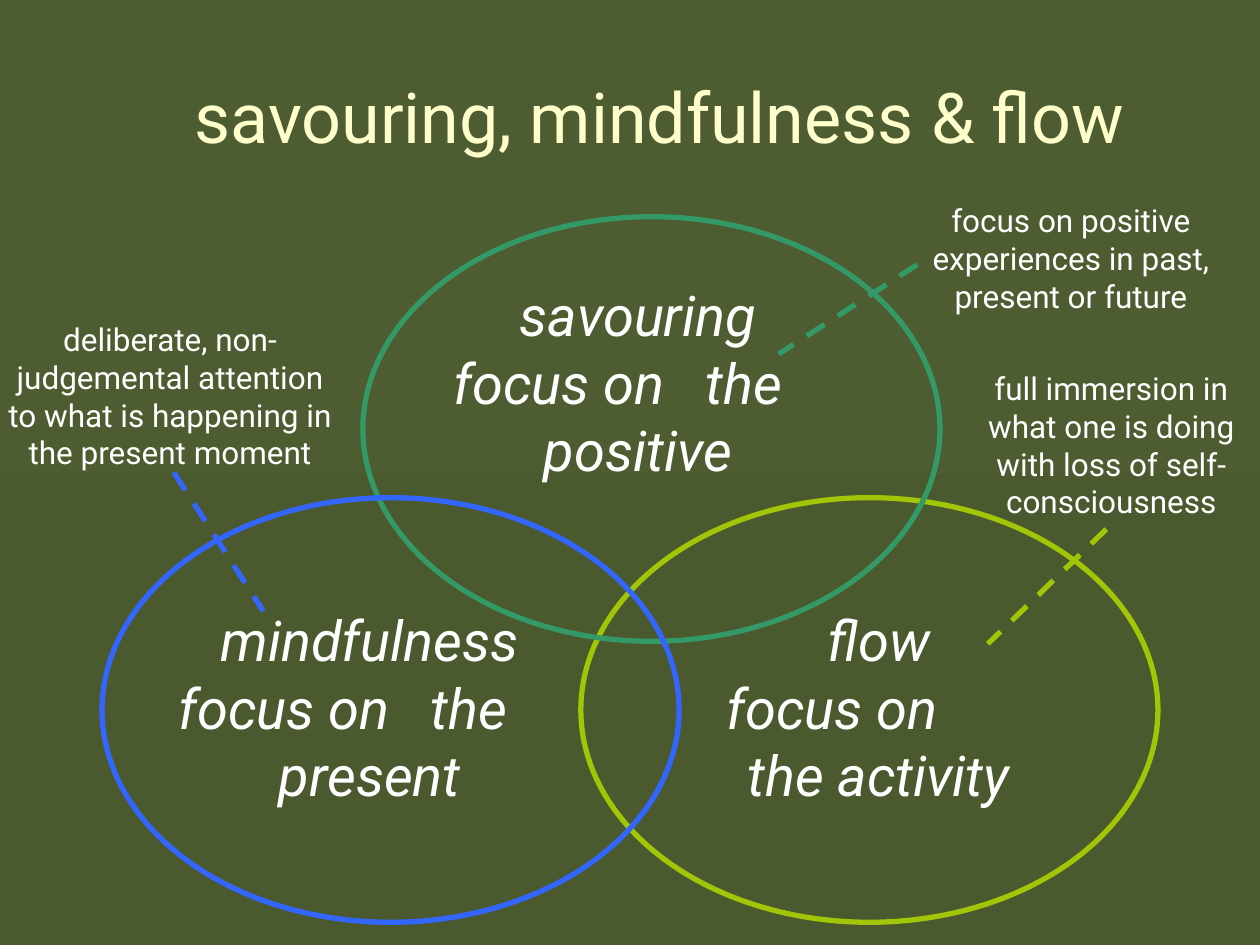
from lxml import etree
from pptx import Presentation
from pptx.dml.color import RGBColor
from pptx.enum import dml, shapes, text
from pptx.oxml.ns import qn
from pptx.util import Inches, Pt

FONT = "Roboto"
COLOURS = {
    "top": "4E5D31", "bottom": "4B592F", "title": "FFFFCC", "text": "FFFFFF",
    "flow": "A1C607", "savouring": "339966", "mindfulness": "3366FF",
}
TITLE = ("savouring, mindfulness & flow", (1.38, 0.33, 7.71, 1.17))
OVAL_SIZE = (4.58, 3.37)

# Each middle line starts at "indent"; "tab" places its second part.
CONCEPTS = [
    {"name": "flow", "oval": (4.61, 3.95), "box": (5.31, 4.76, 3.33, 1.7),
     "lines": ["flow", "focus on", "the activity"], "indent": 0.36, "tab": None,
     "caption": "full immersion in what one is doing with loss of self-consciousness",
     "caption_box": (7.6, 2.88, 2.44, 1.3), "leader": (8.78, 4.2, 7.84, 5.11)},
    {"name": "savouring", "oval": (2.88, 1.72), "box": (3.43, 2.18, 3.27, 1.7),
     "lines": ["savouring", "focus on\tthe", "positive"], "indent": 0.07, "tab": 2.4,
     "caption": "focus on positive experiences in past, present or future",
     "caption_box": (7.2, 1.55, 2.6, 1), "leader": (7.28, 2.1, 6.18, 2.81)},
    {"name": "mindfulness", "oval": (0.81, 3.95), "box": (1.27, 4.76, 3.33, 1.7),
     "lines": ["mindfulness", "focus on\tthe", "present"], "indent": 0.05, "tab": 2.49,
     "caption": "deliberate, non-judgemental attention to what is happening "
                "in the present moment",
     "caption_box": (-0.04, 2.49, 2.78, 1.3), "leader": (1.38, 3.75, 2.09, 4.85)},
]


def colour(name):
    return RGBColor.from_string(COLOURS[name])


def inches(values):
    return [Inches(value) for value in values]


def add_text(page, place, lines, size, ink="text", italic=False,
             anchor=text.MSO_ANCHOR.TOP):
    """Add a text box of centred lines and return its paragraphs."""
    frame = page.shapes.add_textbox(*inches(place)).text_frame
    frame.word_wrap = True
    frame.vertical_anchor = anchor
    frame.text = "\n".join(lines)
    for para in frame.paragraphs:
        para.alignment = text.PP_ALIGN.CENTER
        for span in para.runs:
            span.font.name = FONT
            span.font.size = Pt(size)
            span.font.italic = italic
            span.font.color.rgb = colour(ink)
    return frame.paragraphs


def set_left_line(para, indent, tab):
    """Left-align a line at an indent, with an optional tab stop."""
    para.alignment = text.PP_ALIGN.LEFT
    properties = para._p.get_or_add_pPr()
    properties.set("marL", str(Inches(indent)))
    properties.set("indent", "0")
    if tab:
        stops = etree.SubElement(properties, qn("a:tabLst"))
        etree.SubElement(stops, qn("a:tab"), pos=str(Inches(tab)), algn="l")


def add_oval(page, corner, name):
    oval = page.shapes.add_shape(shapes.MSO_SHAPE.OVAL, *inches(corner + OVAL_SIZE))
    oval.shadow.inherit = False
    oval.fill.background()
    oval.line.color.rgb = colour(name)
    oval.line.width = Pt(3)


def add_leader(page, ends, name):
    leader = page.shapes.add_connector(shapes.MSO_CONNECTOR.STRAIGHT, *inches(ends))
    leader.line.color.rgb = colour(name)
    leader.line.width = Pt(3)
    leader.line.dash_style = dml.MSO_LINE.DASH
    etree.SubElement(leader._element.spPr, qn("a:effectLst"))


def main():
    deck = Presentation()
    deck.slide_width, deck.slide_height = Inches(10), Inches(7.5)
    page = deck.slides.add_slide(deck.slide_layouts[6])

    backdrop = page.background.fill
    backdrop.gradient()
    backdrop.gradient_angle = 270
    for stop, name in zip(backdrop.gradient_stops, ("top", "bottom")):
        stop.color.rgb = colour(name)

    title, place = TITLE
    add_text(page, place, [title], 40, "title", anchor=text.MSO_ANCHOR.MIDDLE)
    for concept in CONCEPTS:
        paras = add_text(page, concept["box"], concept["lines"], 32, italic=True)
        set_left_line(paras[1], concept["indent"], concept["tab"])
        add_oval(page, concept["oval"], concept["name"])
    for concept in CONCEPTS:
        add_text(page, concept["caption_box"], [concept["caption"]], 18)
        add_leader(page, concept["leader"], concept["name"])

    deck.save("out.pptx")


if __name__ == "__main__":
    main()
